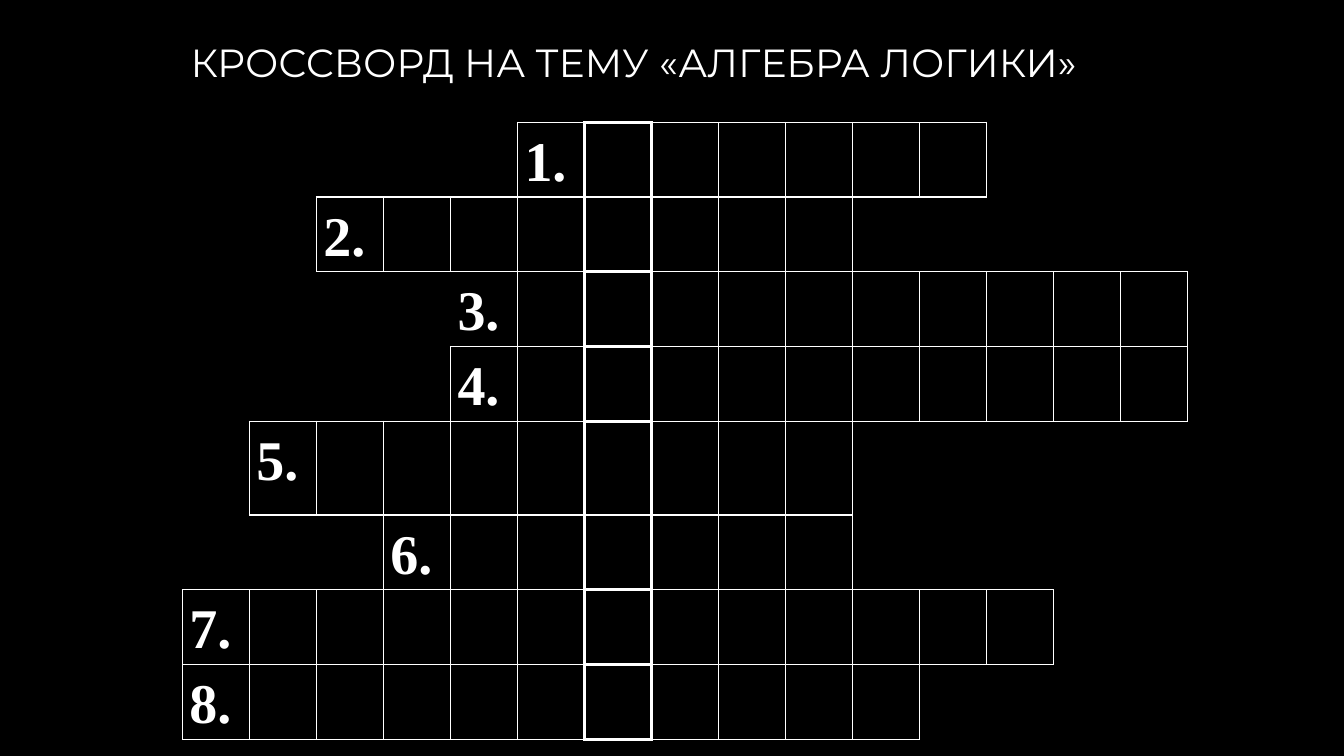
"""Builds a crossword slide: a title over a table whose key column has heavy borders."""
from dataclasses import dataclass

from lxml import etree
from pptx import Presentation
from pptx.dml.color import RGBColor
from pptx.enum.text import MSO_ANCHOR, MSO_AUTO_SIZE, PP_ALIGN
from pptx.oxml.ns import qn
from pptx.util import Pt

LEFT, JUSTIFY = PP_ALIGN.LEFT, PP_ALIGN.JUSTIFY
TOP = MSO_ANCHOR.TOP
FIXED = MSO_AUTO_SIZE.NONE

BLACK, WHITE = "000000", "FFFFFF"
NO_STYLE = "{2D5ABB26-0587-4C30-8999-92F81FD0307C}"
COLUMNS, KEY_COLUMN = 15, 6
CELL_WIDTH = 47.9
THIN, HEAVY = 1, 2.25


@dataclass(frozen=True)
class Word:
    start: int
    length: int
    align: PP_ALIGN = LEFT
    height: float = 53.4
    open_left: bool = False


WORDS = [
    Word(5, 7, JUSTIFY),
    Word(2, 8, JUSTIFY),
    Word(4, 11, JUSTIFY, open_left=True),
    Word(4, 11, JUSTIFY),
    Word(1, 9, height=67),
    Word(3, 7),
    Word(0, 13),
    Word(0, 11),
]


def color(value: str) -> RGBColor:
    return RGBColor.from_string(value)


def apply(target, formats: dict) -> None:
    for name, value in formats.items():
        setattr(target, name, value)


def write(tf, text: str, align: PP_ALIGN, size: float, font: str, bold: bool = False):
    p = tf.paragraphs[0]
    p.alignment = align
    r = p.add_run()
    r.text = text
    apply(r.font, {"size": Pt(size), "name": font, "bold": bold})
    r.font.color.rgb = color(WHITE)
    return p


def add_border(cell, side: str, width: float) -> None:
    tcPr = cell._tc.get_or_add_tcPr()
    ln = etree.SubElement(tcPr, qn(f"a:ln{side}"), w=str(Pt(width)))
    fill = etree.SubElement(ln, qn("a:solidFill"))
    etree.SubElement(fill, qn("a:srgbClr"), val=WHITE)


def border_widths(word: Word, col: int) -> dict[str, float]:
    if col == KEY_COLUMN:
        return dict.fromkeys("LRTB", HEAVY)
    widths = dict.fromkeys("LRTB", THIN)
    if col == KEY_COLUMN - 1:
        widths["R"] = HEAVY
    if col == KEY_COLUMN + 1:
        widths["L"] = HEAVY
    if col == word.start and word.open_left:
        del widths["L"]
    return widths


def add_title(s) -> None:
    sp = s.shapes.title
    apply(sp, {"left": Pt(129), "top": Pt(24), "width": Pt(702), "height": Pt(41)})
    tf = sp.text_frame
    apply(tf, {"word_wrap": True, "auto_size": FIXED, "vertical_anchor": TOP})
    write(tf, "КРОССВОРД НА ТЕМУ «АЛГЕБРА ЛОГИКИ»", LEFT, 28, "Montserrat")


def add_crossword(s) -> None:
    height = sum(word.height for word in WORDS)
    frame = s.shapes.add_table(len(WORDS), COLUMNS, Pt(130.3), Pt(87.4),
                               Pt(COLUMNS * CELL_WIDTH), Pt(height))
    table = frame.table
    apply(table, {"first_row": False, "horz_banding": False})
    table._tbl.tblPr.find(qn("a:tableStyleId")).text = NO_STYLE
    for column in table.columns:
        column.width = Pt(CELL_WIDTH)
    for row, word in enumerate(WORDS):
        table.rows[row].height = Pt(word.height)
        for col in range(COLUMNS):
            cell = table.cell(row, col)
            if word.start <= col < word.start + word.length:
                for side, width in border_widths(word, col).items():
                    add_border(cell, side, width)
            cell.fill.background()
        cell = table.cell(row, word.start)
        apply(cell, {"margin_left": Pt(5), "margin_right": Pt(5),
                     "margin_top": Pt(0), "margin_bottom": Pt(0)})
        p = write(cell.text_frame, f"{row + 1}.", word.align, 40, "Times New Roman", True)
        p.line_spacing = 1.15


def main() -> None:
    prs = Presentation()
    apply(prs, {"slide_width": Pt(960), "slide_height": Pt(540)})
    s = prs.slides.add_slide(prs.slide_layouts[5])
    s.background.fill.solid()
    s.background.fill.fore_color.rgb = color(BLACK)
    add_crossword(s)
    add_title(s)
    prs.save("out.pptx")


if __name__ == "__main__":
    main()
